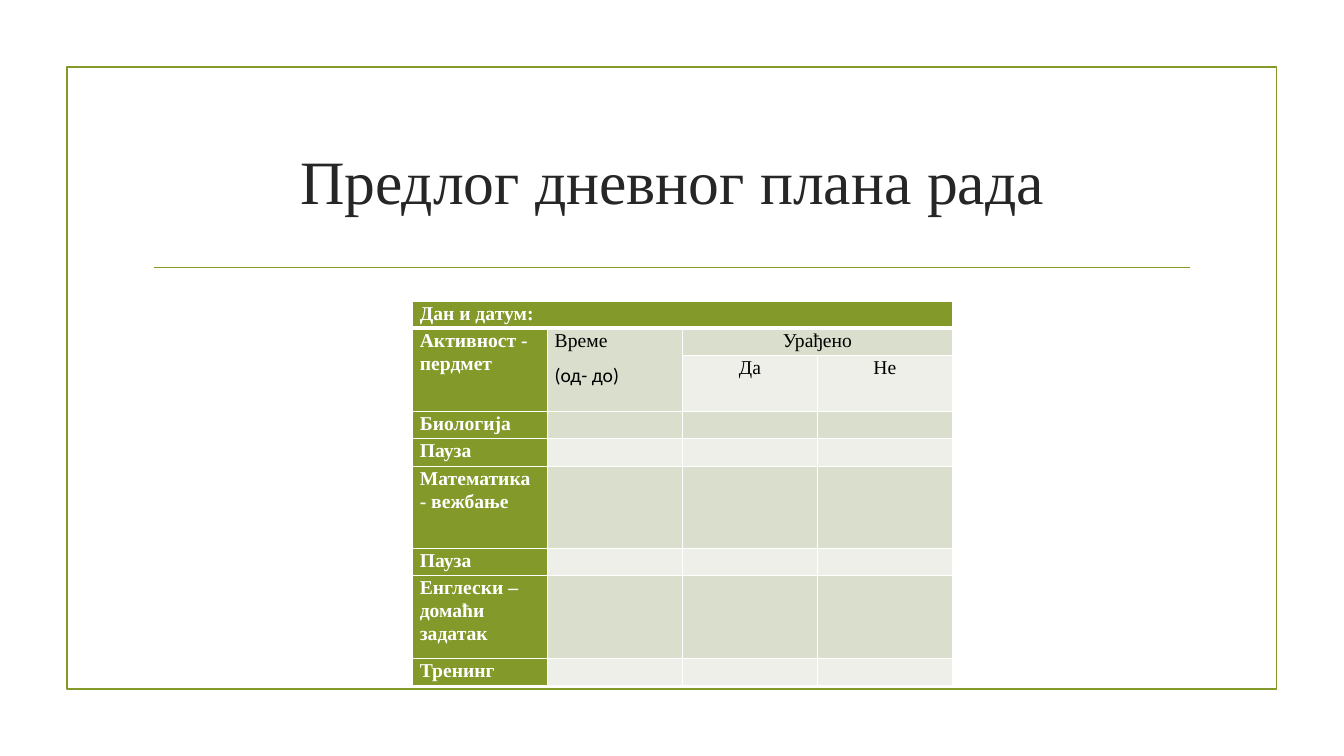
from lxml.etree import SubElement
from pptx import Presentation
from pptx.dml.color import RGBColor
from pptx.enum.shapes import MSO_CONNECTOR, MSO_SHAPE
from pptx.enum.text import MSO_ANCHOR, PP_ALIGN
from pptx.oxml.ns import qn
from pptx.util import Cm, Pt

COLORS = {
    "green": "83992A",
    "band": "D9DECD",
    "light": "EDEFE8",
    "title": "262626",
    "white": "FFFFFF",
    "black": "000000",
}


def rgb(name):
    return RGBColor.from_string(COLORS[name])


def write(p, text, size=14, font="Times New Roman", color="black", bold=False,
          align=PP_ALIGN.LEFT, spacing=None, after=None):
    p.alignment = align
    p.line_spacing = spacing
    if after is not None:
        p.space_after = Pt(after)
    r = p.add_run()
    r.text = text
    r.font.size = Pt(size)
    r.font.name = font
    r.font.bold = bold
    r.font.color.rgb = rgb(color)


prs = Presentation()
prs.slide_width, prs.slide_height = Cm(33.87), Cm(19.05)
s = prs.slides.add_slide(prs.slide_layouts[6])

# Frame
sp = s.shapes.add_shape(MSO_SHAPE.RECTANGLE, Cm(1.69), Cm(1.69), Cm(30.48), Cm(15.68))
sp.shadow.inherit = False
sp.fill.background()
sp.line.color.rgb = rgb("green")
sp.line.width = Pt(1.25)

# Rule under the title
rule = s.shapes.add_connector(MSO_CONNECTOR.STRAIGHT, Cm(3.89), Cm(6.74), Cm(30), Cm(6.74))
rule.line.color.rgb = rgb("green")
rule.line.width = Pt(1.25)
SubElement(rule._element.spPr, qn("a:effectLst"))

# Title
box = s.shapes.add_textbox(Cm(3.61), Cm(2.72), Cm(26.67), Cm(3.63))
tf = box.text_frame
tf.word_wrap = True
tf.vertical_anchor = MSO_ANCHOR.MIDDLE
write(tf.paragraphs[0], "Предлог дневног плана рада", size=44, color="title",
      align=PP_ALIGN.CENTER)

# Daily plan table
heights = [0.67, 0.69, 1.41, 0.69, 0.69, 2.07, 0.69, 2.08, 0.69]
activities = ["Дан и датум:", "Активност - пердмет", "", "Биологија", "Пауза",
              "Математика - вежбање", "Пауза", "Енглески – домаћи задатак", "Тренинг"]
headings = {(1, 1): ["Време", "(од- до)"], (1, 2): ["Урађено"],
            (2, 2): ["Да"], (2, 3): ["Не"]}
merges = [((0, 0), (0, 3)), ((1, 0), (2, 0)), ((1, 1), (2, 1)), ((1, 2), (1, 3))]

table = s.shapes.add_table(len(heights), 4, Cm(10.4), Cm(7.6), Cm(13.6),
                           Cm(sum(heights))).table
table.first_row = table.horz_banding = False
for col in table.columns:
    col.width = Cm(3.4)
for row, height in zip(table.rows, heights):
    row.height = Cm(height)
for start, end in merges:
    table.cell(*start).merge(table.cell(*end))

for i, activity in enumerate(activities):
    for j in range(4):
        cell = table.cell(i, j)
        cell.margin_left = cell.margin_right = Cm(0.18)
        cell.margin_top = cell.margin_bottom = 0

        # White borders, thicker below the date row
        tcPr = cell._tc.get_or_add_tcPr()
        for side in ("lnL", "lnR", "lnT", "lnB"):
            thick = (i, side) in ((0, "lnB"), (1, "lnT"))
            ln = SubElement(tcPr, qn(f"a:{side}"), w=str(Pt(3 if thick else 1)))
            SubElement(SubElement(ln, qn("a:solidFill")), qn("a:srgbClr"),
                       val=COLORS["white"])

        # Fill: green headings, alternating bands elsewhere
        heading = i == 0 or j == 0
        cell.fill.solid()
        cell.fill.fore_color.rgb = rgb("green" if heading else "band" if i % 2 else "light")

        # Text
        lines = [activity] if j == 0 and activity else headings.get((i, j), [])
        tf = cell.text_frame
        for n, line in enumerate(lines):
            p = tf.add_paragraph() if n else tf.paragraphs[0]
            write(p, line, font="Calibri" if n else "Times New Roman",
                  color="white" if heading else "black", bold=heading,
                  align=PP_ALIGN.CENTER if j > 1 else PP_ALIGN.LEFT,
                  spacing=1.07, after=8)
        if not lines:
            SubElement(tf.paragraphs[0]._p, qn("a:endParaRPr"), sz="1400")

prs.save("out.pptx")
